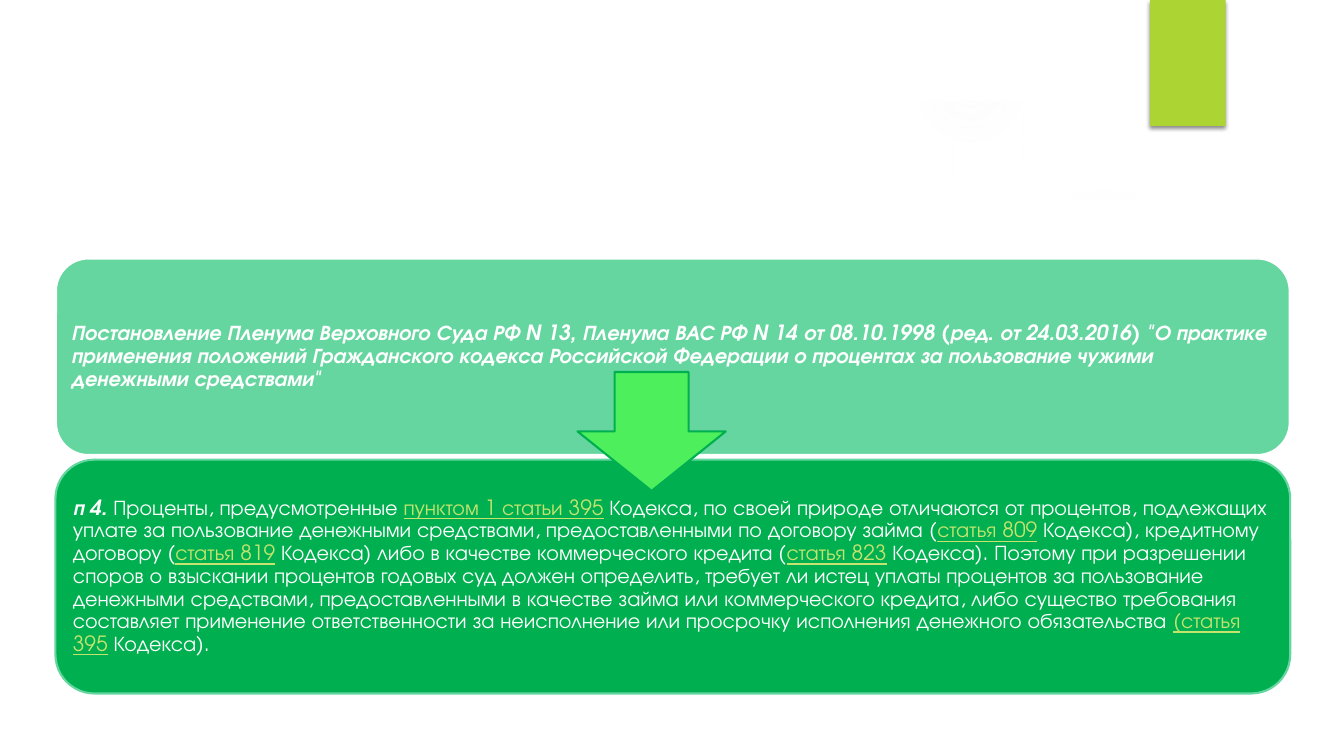
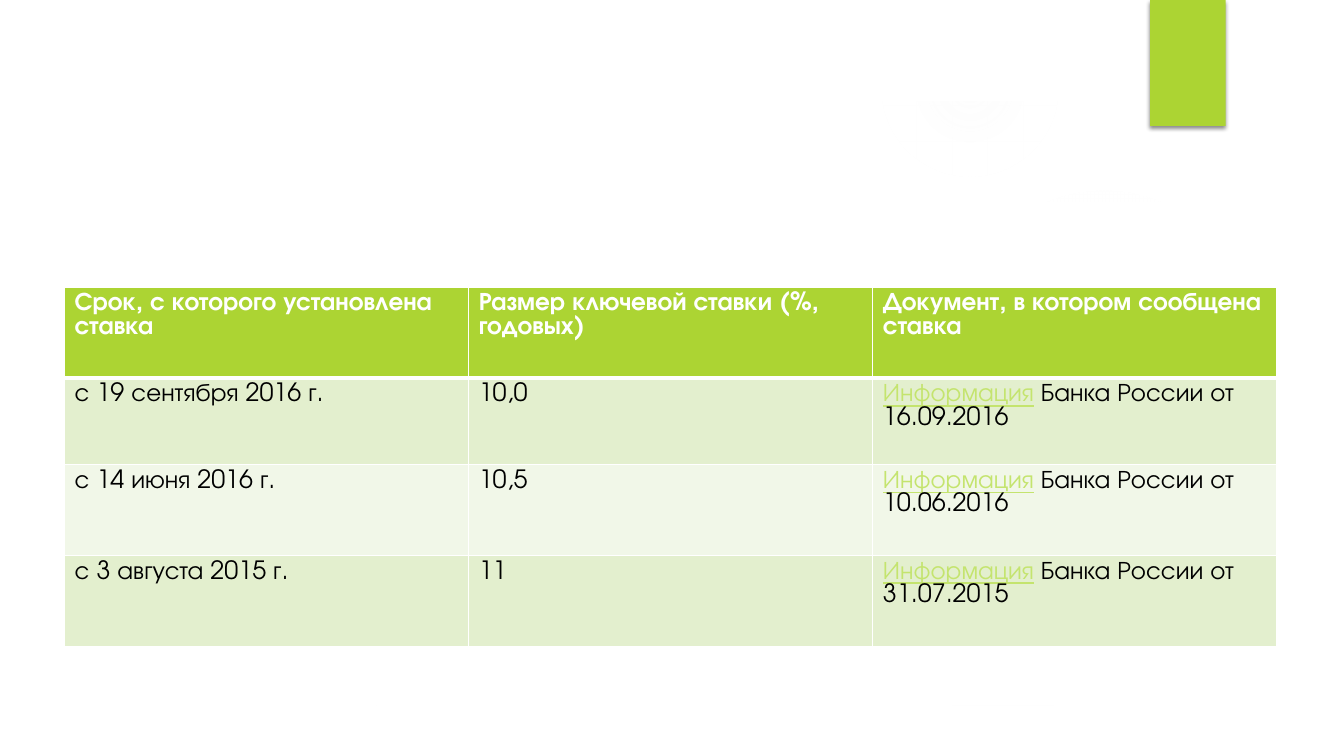
from pptx import Presentation, util as u
from pptx.dml.color import RGBColor
from pptx.enum import shapes, text
from pptx.oxml import parse_xml
from pptx.oxml.ns import nsdecls, qn

FONT = "TeX Gyre Adventor"
COLORS = {
    "white": "FFFFFF", "black": "000000", "lime": "ACD433", "link": "C4E46E",
    "mint": "65D6A0", "green": "00B050", "arrow": "4DEF5C", "glow": "F7F7F7",
    "row_dark": "E3EFCE", "row_light": "F1F7E8",
}
KINDS = shapes.MSO_SHAPE

# Backdrop: left, top, size and (position, opacity) stops of each glow
GLOWS = [
    (0, 2.92, 4.58, [(0, 11), (36, 10), (75, 0)]),
    (0, 3.17, 2.58, [(0, 8), (36, 8), (72, 0)]),
    (9.41, 1.83, 3.08, [(0, 7), (36, 6), (69, 0)]),
    (8.75, 0, 1.75, [(0, 14), (36, 7), (73, 0)]),
    (9.41, 6.42, 1.08, [(0, 14), (36, 7), (66, 0)]),
]
SWOOSH = [(9.34, 2.5), (10.4, 2.46), (11.6, 2.33), (12.89, 2.14), (12.83, 1.66),
          (12.25, 1.85), (11.67, 2), (11.09, 2.14), (10.53, 2.25), (9.99, 2.34), (9.3, 2.43)]
PANEL = [(0.5, 2.04), (0.5, 7), (12.84, 7), (12.84, 2.04), (12, 2.17), (11.16, 2.27),
         (10.32, 2.35), (9.49, 2.41), (8.67, 2.45), (7.86, 2.47), (7.08, 2.48), (6.32, 2.47),
         (5.59, 2.46), (4.88, 2.43), (4.01, 2.38), (3.21, 2.33), (2.49, 2.27), (1.59, 2.18)]
FRAME_OUTER = [(0, 0), (0, 7.5), (13.33, 7.5), (13.33, 0)]
FRAME_INNER = [(12.81, 6.98), (12.81, 0.52), (0.52, 0.52), (0.52, 6.98)][::-1]
FRAME_INNER = [(12.81, 6.98), (0.52, 6.98), (0.52, 0.52), (12.81, 0.52)]

# Runs are (text, style); style is "", "link" or "strong"
RULING = [(
    'Постановление Пленума Верховного Суда РФ N 13, Пленума ВАС РФ N 14 от 08.10.1998 '
    '(ред. от 24.03.2016) "О практике применения положений Гражданского кодекса '
    'Российской Федерации о процентах за пользование чужими денежными средствами"', "strong")]
CLAUSE = [
    ("п 4. ", "strong"),
    ("Проценты, предусмотренные ", ""),
    ("пунктом 1 статьи 395", "link"),
    (" Кодекса, по своей природе отличаются от процентов, подлежащих уплате за пользование "
     "денежными средствами, предоставленными по договору займа (", ""),
    ("статья 809", "link"),
    (" Кодекса), кредитному договору (", ""),
    ("статья 819", "link"),
    (" Кодекса) либо в качестве коммерческого кредита (", ""),
    ("статья 823", "link"),
    (" Кодекса). Поэтому при разрешении споров о взыскании процентов годовых суд должен "
     "определить, требует ли истец уплаты процентов за пользование денежными средствами, "
     "предоставленными в качестве займа или коммерческого кредита, либо существо требования "
     "составляет применение ответственности за неисполнение или просрочку исполнения "
     "денежного обязательства ", ""),
    ("(статья 395", "link"),
    (" Кодекса).", ""),
]
HEADINGS = ["Срок, с которого установлена ставка", "Размер ключевой ставки (%, годовых)",
            "Документ, в котором сообщена ставка"]
RATES = [
    ("с 19 сентября 2016 г.", "10,0", "16.09.2016"),
    ("с 14 июня 2016 г.", "10,5", "10.06.2016"),
    ("с 3 августа 2015 г.", "11", "31.07.2015"),
]


def rgb(name):
    return RGBColor.from_string(COLORS[name])


def paint(figure, fill=None, line=None, width=0):
    figure.shadow.inherit = False
    if fill:
        figure.fill.solid()
        figure.fill.fore_color.rgb = rgb(fill)
    if line:
        figure.line.color.rgb = rgb(line)
        figure.line.width = u.Pt(width)
    else:
        figure.line.fill.background()
    return figure


def add_figure(page, kind, place, *style):
    return paint(page.shapes.add_shape(kind, *map(u.Inches, place)), *style)


def add_outline(page, *contours):
    first, *others = contours
    builder = page.shapes.build_freeform(*first[0], scale=u.Inches(1))
    builder.add_line_segments(first[1:], close=True)
    for contour in others:
        builder.move_to(*contour[0])
        builder.add_line_segments(contour[1:], close=True)
    return paint(builder.convert_to_shape(), "white")


def add_glow(page, left, top, size, stops):
    glow = add_figure(page, KINDS.OVAL, (left, top, size, size))
    marks = "".join(
        f'<a:gs pos="{pos * 1000}"><a:srgbClr val="{COLORS["glow"]}">'
        f'<a:alpha val="{alpha * 1000}"/></a:srgbClr></a:gs>' for pos, alpha in stops)
    glow.element.spPr.insert(2, parse_xml(
        f'<a:gradFill {nsdecls("a")}><a:gsLst>{marks}</a:gsLst><a:path path="circle">'
        '<a:fillToRect l="50000" t="50000" r="50000" b="50000"/></a:path></a:gradFill>'))
    return glow


def add_swoosh(page):
    swoosh = add_outline(page, SWOOSH)
    color = swoosh.element.spPr.find(qn("a:solidFill")).find(qn("a:srgbClr"))
    color.append(parse_xml(f'<a:alpha {nsdecls("a")} val="20000"/>'))
    return swoosh


def add_band(page):
    band = add_figure(page, KINDS.RECTANGLE, (11.41, 0, 0.75, 1.25), "lime")
    band.element.spPr.find(qn("a:effectLst")).append(parse_xml(
        f'<a:outerShdw {nsdecls("a")} blurRad="38100" dist="25400" dir="5400000" rotWithShape="0">'
        f'<a:srgbClr val="{COLORS["black"]}"><a:alpha val="45000"/></a:srgbClr></a:outerShdw>'))
    return band


def move_to_layout(layout, figures):
    for figure in figures:
        layout.shapes.element.append(figure.element)


def write_runs(para, runs, size, color, spacing):
    para.alignment = text.PP_ALIGN.LEFT
    para.line_spacing = spacing
    para.font.name = FONT
    para.font.size = u.Pt(size)
    para.font.color.rgb = rgb(color)
    for words, style in runs:
        span = para.add_run()
        span.text = words
        if style == "link":
            span.font.color.rgb = rgb("link")
            span.font.underline = True
        elif style == "strong":
            span.font.bold = span.font.italic = True


def add_card(page, place, runs, *style):
    frame = add_figure(page, KINDS.ROUNDED_RECTANGLE, place, *style).text_frame
    frame.word_wrap = True
    frame.vertical_anchor = text.MSO_ANCHOR.MIDDLE
    frame.margin_left = frame.margin_right = u.Inches(0.06)
    frame.margin_top = frame.margin_bottom = u.Inches(0.06)
    write_runs(frame.paragraphs[0], runs, 15, "white", 0.9)


def set_borders(cell, top, bottom):
    properties = cell._tc.get_or_add_tcPr()
    sides = [("lnL", 1), ("lnR", 1), ("lnT", top), ("lnB", bottom)]
    for index, (side, width) in enumerate(sides):
        properties.insert(index, parse_xml(
            f'<a:{side} {nsdecls("a")} w="{u.Pt(width)}"><a:solidFill>'
            f'<a:srgbClr val="{COLORS["white"]}"/></a:solidFill></a:{side}>'))


def fill_cell(cell, runs, fill, color, top=1, bottom=1, bold=False):
    cell.fill.solid()
    cell.fill.fore_color.rgb = rgb(fill)
    set_borders(cell, top, bottom)
    para = cell.text_frame.paragraphs[0]
    write_runs(para, runs, 18, color, 1.0)
    para.font.bold = bold


def add_rates(page):
    place = map(u.Inches, (0.64, 2.85, 12.03, 3.56))
    table = page.shapes.add_table(len(RATES) + 1, len(HEADINGS), *place).table
    table.horz_banding = False
    for row, height in zip(table.rows, (0.9, 0.86, 0.9, 0.9)):
        row.height = u.Inches(height)
    for column, heading in enumerate(HEADINGS):
        fill_cell(table.cell(0, column), [(heading, "")], "lime", "white", bottom=3, bold=True)
    for number, (start, rate, date) in enumerate(RATES, 1):
        source = [("Информация", "link"), (f" Банка России от {date}", "")]
        fill = "row_dark" if number % 2 else "row_light"
        for column, runs in enumerate(([(start, "")], [(rate, "")], source)):
            fill_cell(table.cell(number, column), runs, fill, "black", top=3 if number == 1 else 1)


def main():
    deck = Presentation()
    deck.slide_height = u.Inches(7.5)
    deck.slide_width = deck.slide_height * 16 // 9
    layout = deck.slide_layouts[6]
    ruling_page, rates_page = (deck.slides.add_slide(layout) for _ in range(2))

    # Shared backdrop and band
    move_to_layout(layout, [
        *(add_glow(ruling_page, *glow) for glow in GLOWS),
        add_swoosh(ruling_page),
        add_outline(ruling_page, PANEL),
        add_outline(ruling_page, FRAME_OUTER, FRAME_INNER),
        add_band(ruling_page),
    ])

    # Court ruling and its clause
    add_card(ruling_page, (0.55, 2.56, 12.25, 1.96), RULING, "mint", "white", 2.25)
    add_card(ruling_page, (0.55, 4.56, 12.25, 2.32), CLAUSE, "green", "mint", 1.5)
    add_figure(ruling_page, KINDS.DOWN_ARROW, (5.73, 3.69, 1.47, 1.18), "arrow", "green", 1.5)

    # Key rate table
    add_rates(rates_page)
    deck.save("out.pptx")


if __name__ == "__main__":
    main()
